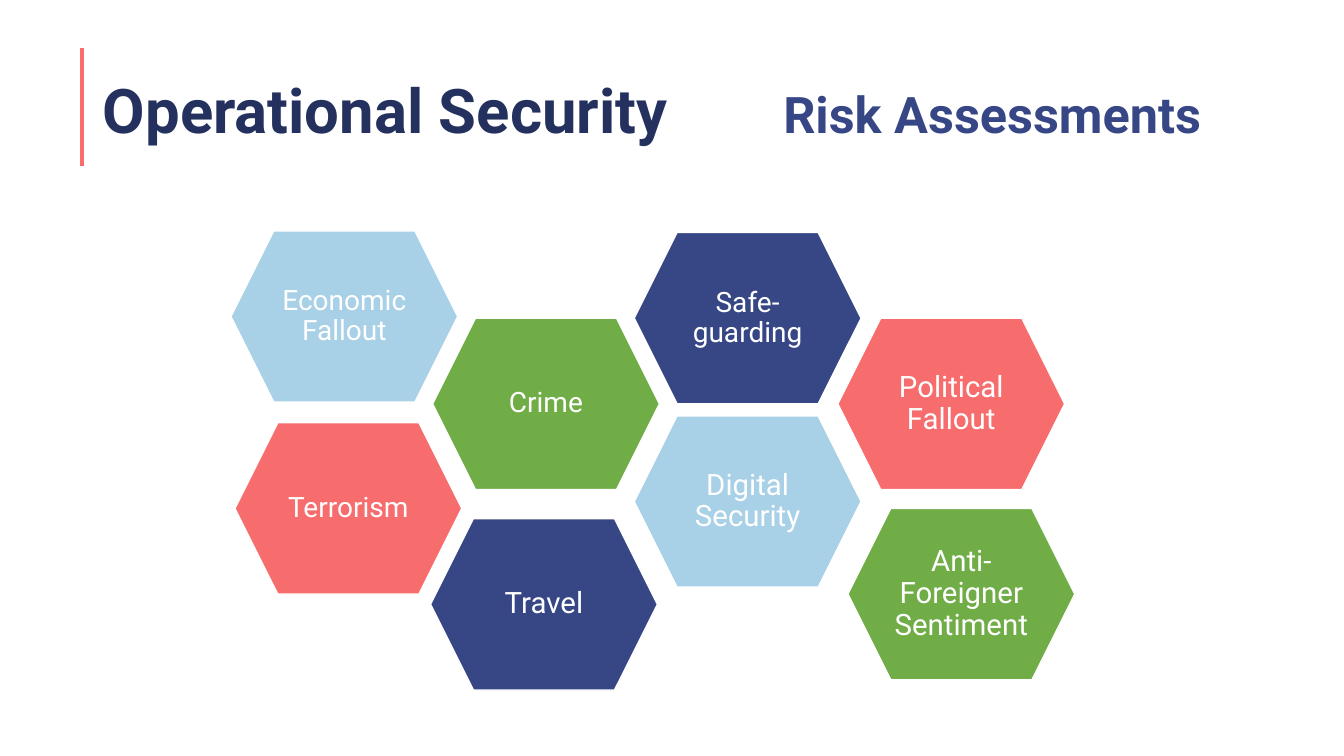
from pptx import Presentation
from pptx.dml.color import RGBColor
from pptx.enum.shapes import MSO_CONNECTOR, MSO_SHAPE
from pptx.enum.text import MSO_ANCHOR, PP_ALIGN
from pptx.oxml.ns import qn
from pptx.util import Inches, Pt
from lxml.etree import SubElement

SLIDE_WIDTH, SLIDE_HEIGHT = 13.33, 7.5
NAVY, BLUE, SKY, CORAL, GREEN, WHITE = (
    "24305E", "374785", "A8D0E6", "F76C6C", "70AD47", "FFFFFF")

HEXAGON_WIDTH, HEXAGON_HEIGHT = 2.25, 1.7
COLUMN_PITCH = 2.0

# Label, column (in pitches), row (in hexagon heights), fill, text size
RISKS = [
    ("Travel", 0.99, 1.68, BLUE, 21),
    ("Economic Fallout", 0, 0, SKY, 20),
    ("Political Fallout", 3.01, 0.51, CORAL, 21),
    ("Anti-Foreigner Sentiment", 3.06, 1.62, GREEN, 21),
    ("Crime", 1, 0.51, GREEN, 20),
    ("Terrorism", 0.02, 1.12, CORAL, 20),
    ("Safe-guarding", 2, 0.01, BLUE, 20),
    ("Digital Security", 2, 1.08, SKY, 21),
]


def color(hex_string):
    return RGBColor.from_string(hex_string)


def write_text(shape, text, size, hex_color, bold=False,
               alignment=PP_ALIGN.LEFT, **frame_format):
    frame = shape.text_frame
    frame.word_wrap = True
    for name, value in frame_format.items():
        setattr(frame, name, value)
    paragraph = frame.paragraphs[0]
    paragraph.text = text
    paragraph.alignment = alignment
    paragraph.line_spacing = 0.9
    font = paragraph.runs[0].font
    for name, value in {"name": "Roboto", "size": Pt(size), "bold": bold}.items():
        setattr(font, name, value)
    font.color.rgb = color(hex_color)


def add_heading(slide, left, top, width, height):
    # Accent line
    line_left, line_top = left - 0.11, top + 0.08
    line = slide.shapes.add_connector(
        MSO_CONNECTOR.STRAIGHT, Inches(line_left), Inches(line_top),
        Inches(line_left), Inches(line_top + 1.17))
    line.line.color.rgb = color(CORAL)
    line.line.width = Pt(3)
    SubElement(line._element.spPr, qn("a:effectLst"))

    # Title
    title = slide.shapes.title
    box = {"left": left, "top": top, "width": width, "height": height}
    for name, value in box.items():
        setattr(title, name, Inches(value))
    write_text(title, "Operational Security", 44, NAVY, bold=True,
               vertical_anchor=MSO_ANCHOR.MIDDLE)

    # Subtitle
    subtitle = slide.shapes.add_textbox(
        Inches(left + 6.75), Inches(top + 0.44), Inches(5.09), Inches(0.61))
    write_text(subtitle, "Risk Assessments", 36, BLUE, bold=True)


def add_honeycomb(slide, left, top):
    for label, column, row, fill, size in RISKS:
        hexagon = slide.shapes.add_shape(
            MSO_SHAPE.HEXAGON,
            Inches(left + column * COLUMN_PITCH),
            Inches(top + row * HEXAGON_HEIGHT),
            Inches(HEXAGON_WIDTH), Inches(HEXAGON_HEIGHT))
        hexagon.shadow.inherit = False
        hexagon.fill.solid()
        hexagon.fill.fore_color.rgb = color(fill)
        hexagon.line.color.rgb = color(WHITE)
        hexagon.line.width = Pt(1)
        margins = {f"margin_{side}": Inches(0.08)
                   for side in ("left", "top", "right", "bottom")}
        write_text(hexagon, label, size, WHITE, alignment=PP_ALIGN.CENTER,
                   vertical_anchor=MSO_ANCHOR.MIDDLE, **margins)


def main():
    presentation = Presentation()
    presentation.slide_width = Inches(SLIDE_WIDTH)
    presentation.slide_height = Inches(SLIDE_HEIGHT)
    slide = presentation.slides.add_slide(presentation.slide_layouts[5])
    add_heading(slide, 0.92, 0.4, 11.5, 1.45)
    add_honeycomb(slide, 2.29, 2.29)
    presentation.save("out.pptx")


if __name__ == "__main__":
    main()
